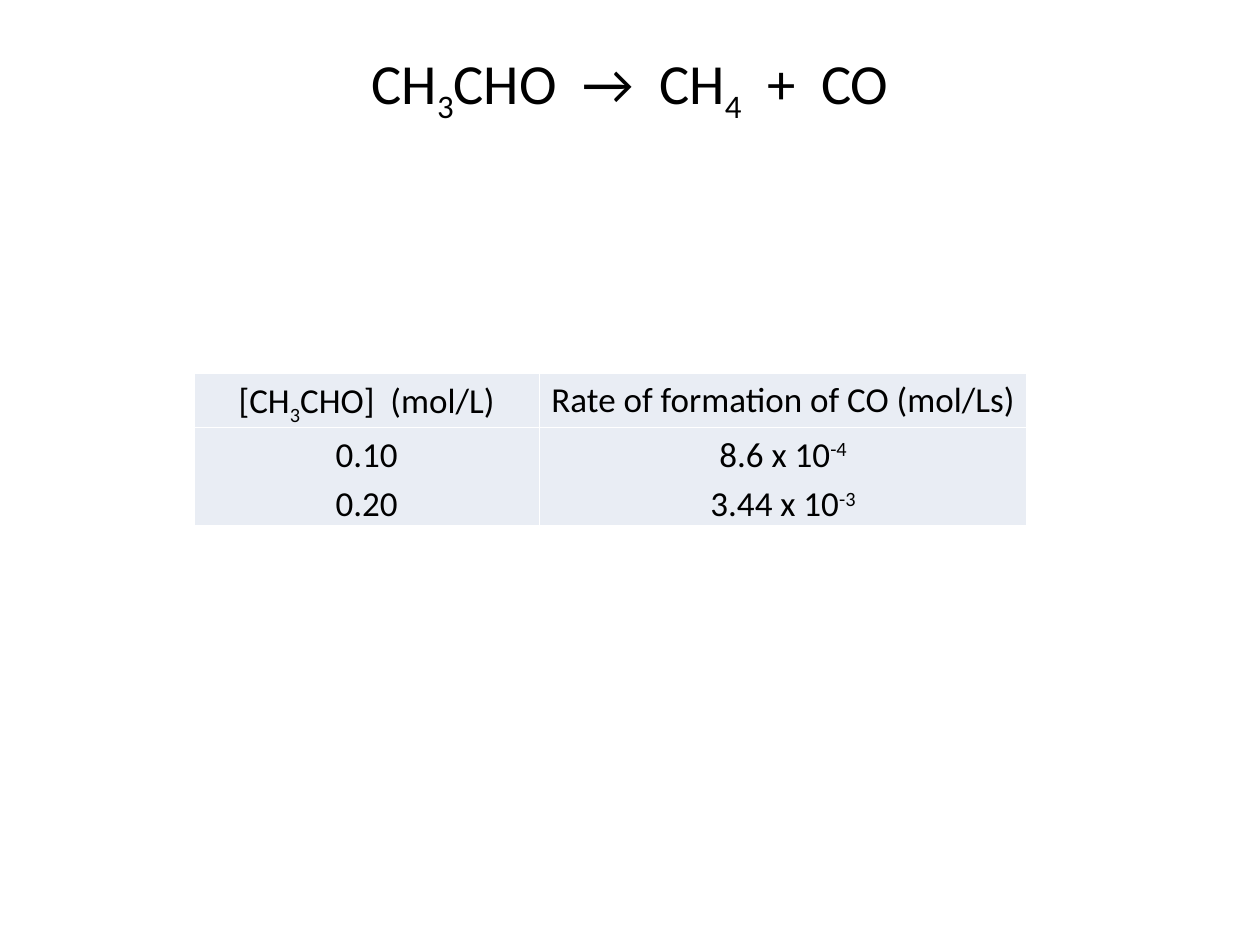
"""Build a slide with a decomposition reaction and its table of rate data."""
from lxml.etree import SubElement
from pptx import Presentation
from pptx.dml.color import RGBColor
from pptx.enum.text import MSO_ANCHOR as Anchor, PP_ALIGN as Align
from pptx.oxml.ns import qn
from pptx.util import Inches, Pt

COLORS = {"text": "000000", "cell": "E9EDF4", "border": "FFFFFF"}
SUB, SUPER = -25, 30


def write(para, spans, size):
    para.alignment = Align.CENTER
    for text, baseline in spans:
        span = para.add_run()
        span.text = text
        span.font.name = "Calibri"
        span.font.size = Pt(size)
        span.font.color.rgb = RGBColor.from_string(COLORS["text"])
        if baseline:
            span.font._element.set("baseline", str(baseline * 1000))


def add_borders(cell):
    properties = cell._tc.get_or_add_tcPr()
    for side in ("lnL", "lnR", "lnT", "lnB"):
        line = SubElement(properties, qn(f"a:{side}"), w=str(Pt(1)))
        fill = SubElement(line, qn("a:solidFill"))
        SubElement(fill, qn("a:srgbClr"), val=COLORS["border"])


deck = Presentation()
deck.slide_width, deck.slide_height = Inches(10), Inches(7.5)
page = deck.slides.add_slide(deck.slide_layouts[5])

title = page.shapes.title
title.left, title.top = Inches(0.5), Inches(0.3)
title.width, title.height = Inches(9), Inches(1.25)
title.text_frame.vertical_anchor = Anchor.TOP
title.text_frame.margin_top = Inches(0.08)
reaction = [("CH", 0), ("3", SUB), ("CHO  →  CH", 0), ("4", SUB), ("  +  CO", 0)]
write(title.text_frame.paragraphs[0], reaction, 32.4)

rows = [
    [
        [[("[CH", 0), ("3", SUB), ("CHO]  (mol/L)", 0)]],
        [[("Rate of formation of CO (mol/Ls)", 0)]],
    ],
    [
        [[("0.10", 0)], [("0.20", 0)]],
        [[("8.6 x 10", 0), ("-4", SUPER)], [("3.44 x 10", 0), ("-3", SUPER)]],
    ],
]
frame = page.shapes.add_table(2, 2, Inches(1.54), Inches(2.96), Inches(6.61), Inches(1.21))
table = frame.table
table.first_row = table.horz_banding = False
for column, width in zip(table.columns, (2.74, 3.87)):
    column.width = Inches(width)
for row, height in zip(table.rows, (0.43, 0.78)):
    row.height = Inches(height)

for row, contents in zip(table.rows, rows):
    for cell, lines in zip(row.cells, contents):
        cell.margin_left = cell.margin_right = Inches(0.07)
        cell.margin_top = cell.margin_bottom = 0
        add_borders(cell)
        cell.fill.solid()
        cell.fill.fore_color.rgb = RGBColor.from_string(COLORS["cell"])
        for index, spans in enumerate(lines):
            text = cell.text_frame
            para = text.add_paragraph() if index else text.paragraphs[0]
            para.line_spacing = 1.15
            write(para, spans, 20)

deck.save("out.pptx")
